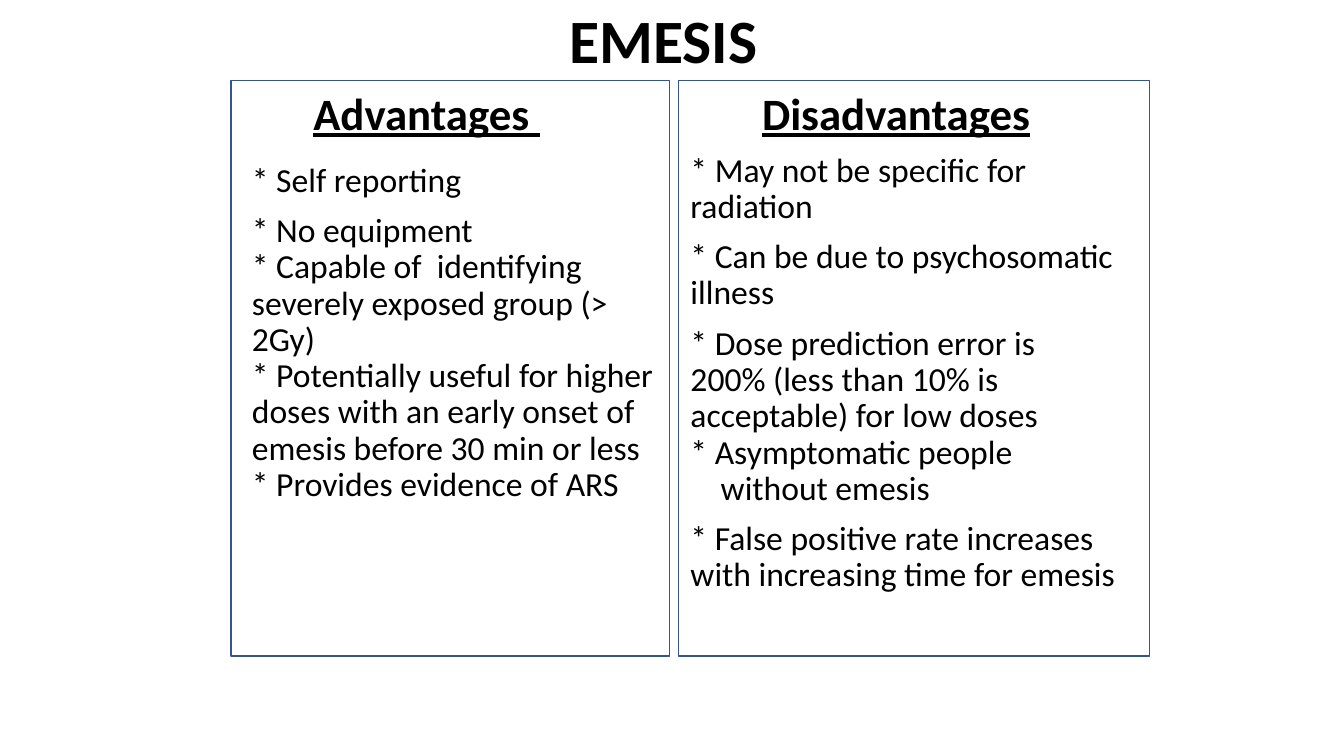
from pptx import Presentation
from pptx.dml.color import RGBColor
from pptx.enum.shapes import MSO_SHAPE
from pptx.enum.text import MSO_ANCHOR, PP_ALIGN
from pptx.util import Inches, Pt

# Content: each point is (text, space before in points, left indent in inches)
TITLE = "EMESIS"
ADVANTAGES = [
    ("* Self reporting", 10, 0),
    ("* No equipment", 10, 0),
    ("* Capable of  identifying", 0, 0),
    ("severely exposed group (> 2Gy)", 0, 0),
    ("* Potentially useful for higher doses with an early onset of "
     "emesis before 30 min or less", 0, 0),
    ("* Provides evidence of ARS", 0, 0),
]
DISADVANTAGES = [
    ("* May not be specific for radiation", 10, 0),
    ("* Can be due to psychosomatic illness", 10, 0),
    ("* Dose prediction error is 200% (less than 10% is acceptable) "
     "for low doses", 10, 0),
    ("* Asymptomatic people", 0, 0),
    ("without emesis", 0, 0.3),
    ("* False positive rate increases with increasing time for emesis", 10, 0),
]

# Layout in inches
SLIDE_W, SLIDE_H = 13.33, 7.5
PANEL_TOP, PANEL_H = 0.8, 5.71
HEADING_W, HEADING_H = 2.9, 0.64
POINTS_W = 4.42
COLUMNS = [
    {"heading": "Advantages ", "points": ADVANTAGES, "panel": (2.29, 4.35),
     "heading_left": 3.01, "points_at": (2.4, 1.57), "points_h": 4.95},
    {"heading": "Disadvantages", "points": DISADVANTAGES, "panel": (6.73, 4.67),
     "heading_left": 7.46, "points_at": (6.75, 1.47), "points_h": 5.13},
]

COLORS = {"text": "000000", "border": "325491"}
FONTS = {
    "title": {"size": Pt(44), "bold": True},
    "heading": {"size": Pt(32), "bold": True, "underline": True},
    "point": {"size": Pt(24)},
}

deck = Presentation()
deck.slide_width, deck.slide_height = Inches(SLIDE_W), Inches(SLIDE_H)
slide = deck.slides.add_slide(deck.slide_layouts[6])


def add_text(box, points, style, spacing=0.9, align=PP_ALIGN.LEFT,
             anchor=MSO_ANCHOR.TOP):
    frame = slide.shapes.add_textbox(*map(Inches, box)).text_frame
    frame.word_wrap = True
    frame.vertical_anchor = anchor
    for index, (text, before, indent) in enumerate(points):
        line = frame.add_paragraph() if index else frame.paragraphs[0]
        line.alignment, line.line_spacing = align, spacing
        line.space_before = Pt(before)
        if indent:
            line._p.get_or_add_pPr().set("marL", str(Inches(indent)))
        run = line.add_run()
        run.text = text
        run.font.name = "Calibri"
        run.font.color.rgb = RGBColor.from_string(COLORS["text"])
        for name, value in FONTS[style].items():
            setattr(run.font, name, value)


# Title
add_text((2.08, -0.19, 9, 1.25), [(TITLE, 0, 0)], "title",
         align=PP_ALIGN.CENTER, anchor=MSO_ANCHOR.MIDDLE)

# Two columns: points, heading and outlined panel
for column in COLUMNS:
    add_text((*column["points_at"], POINTS_W, column["points_h"]),
             column["points"], "point")
    add_text((column["heading_left"], PANEL_TOP, HEADING_W, HEADING_H),
             [(column["heading"], 0, 0)], "heading", spacing=1.0)
    left, width = column["panel"]
    panel = slide.shapes.add_shape(
        MSO_SHAPE.RECTANGLE, *map(Inches, (left, PANEL_TOP, width, PANEL_H)))
    panel.shadow.inherit = False
    panel.fill.background()
    panel.line.color.rgb = RGBColor.from_string(COLORS["border"])
    panel.line.width = Pt(1)

deck.save("out.pptx")
